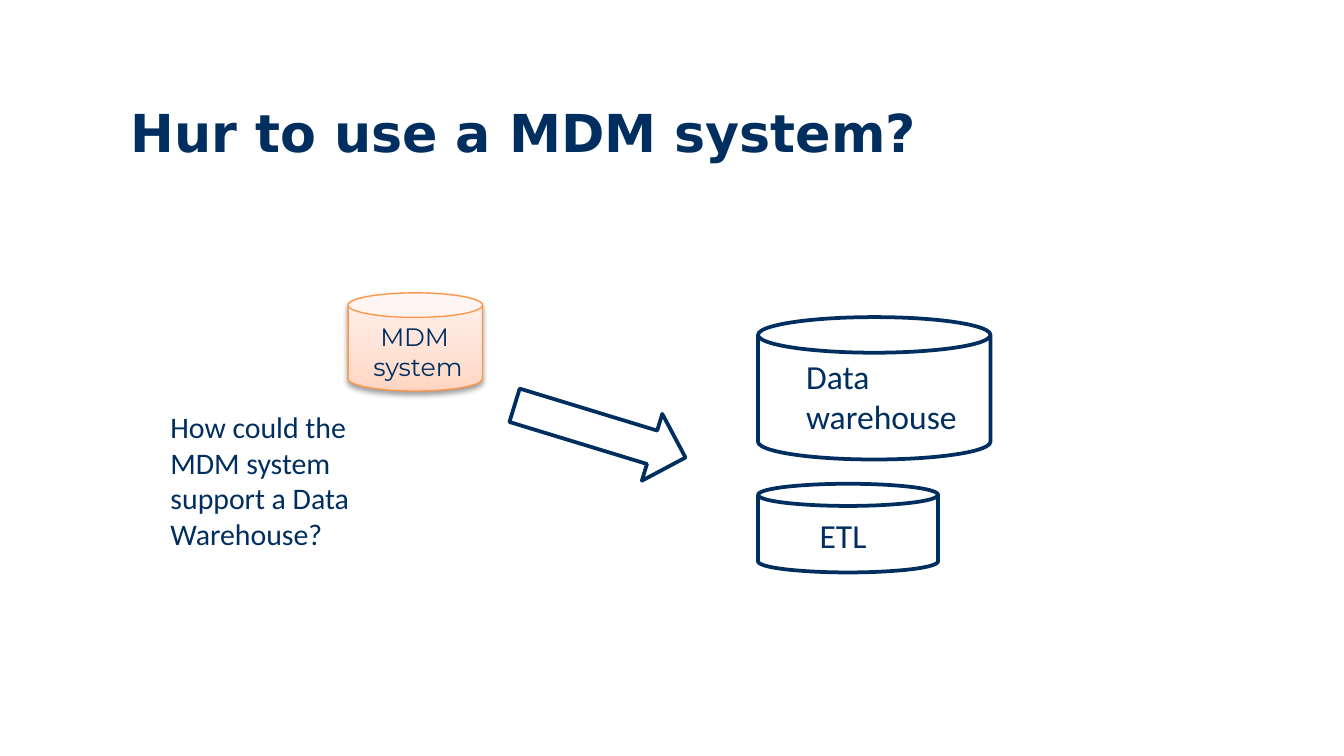
from lxml import etree
from pptx import Presentation
from pptx.dml.color import RGBColor
from pptx.enum.shapes import MSO_SHAPE
from pptx.enum.text import MSO_ANCHOR, PP_ALIGN
from pptx.oxml import parse_xml
from pptx.oxml.ns import nsdecls, qn
from pptx.util import Inches, Pt

CAN, ARROW = MSO_SHAPE.CAN, MSO_SHAPE.RIGHT_ARROW
LEFT, CENTER = PP_ALIGN.LEFT, PP_ALIGN.CENTER
TITLE_ONLY = 5

COLORS = {"navy": "002F5F", "white": "FFFFFF", "orange": "FE9749", "shadow": "000000"}
PEACH_STOPS = [(0, "FFD5C2"), (35, "FFE1D4"), (100, "FFF3EF")]

# Content: boxes are left, top, width, height in inches
TITLE = ("Hur to use a MDM system?", (0.87, 0.69, 7.49, 0.65))
MDM_CAN = (2.59, 2.18, 1, 0.73)
OUTLINED = [  # kind, box, rotation
    (ARROW, (3.8, 2.95, 1.33, 0.52), 17),
    (CAN, (5.64, 2.36, 1.73, 1.06), 0),
    (CAN, (5.64, 3.6, 1.34, 0.66), 0),
]
LABELS = [  # paragraphs, box, font, size, alignment, side and top margins
    (["MDM", " system"], (2.11, 2.32, 1.95, 0.59), "Montserrat", 13.5, CENTER, (0.14, 0.07)),
    (["Data warehouse"], (5.9, 2.6, 1.47, 0.71), "Calibri", 18, LEFT, (0.1, 0.05)),
    (["ETL"], (6, 3.78, 1.47, 0.4), "Calibri", 18, LEFT, (0.1, 0.05)),
    (["How could the MDM system support a Data Warehouse?"],
     (1.17, 2.99, 1.62, 1.18), "Calibri", 16, LEFT, (0.1, 0.05)),
]


def color(name):
    return RGBColor.from_string(COLORS[name])


def add_run(paragraph, text, font, size, bold=False):
    run = paragraph.add_run()
    run.text = text
    run.font.name, run.font.size, run.font.bold = font, Pt(size), bold
    run.font.color.rgb = color("navy")


def add_outlined(slide, kind, box, line, width, rotation=0):
    shape = slide.shapes.add_shape(kind, *map(Inches, box))
    shape.rotation = rotation
    shape.shadow.inherit = False
    shape.fill.solid()
    shape.fill.fore_color.rgb = color("white")
    shape.line.color.rgb = color(line)
    shape.line.width = Pt(width)
    return shape


def add_gradient_and_shadow(shape):
    properties = shape.element.spPr
    stops = "".join(f'<a:gs pos="{position * 1000}"><a:srgbClr val="{value}"/></a:gs>'
                    for position, value in PEACH_STOPS)
    gradient = parse_xml(f'<a:gradFill {nsdecls("a")} rotWithShape="1"><a:gsLst>{stops}</a:gsLst>'
                         '<a:lin ang="16200000" scaled="0"/></a:gradFill>')
    properties.replace(properties.find(qn("a:solidFill")), gradient)
    shadow = etree.SubElement(properties.find(qn("a:effectLst")), qn("a:outerShdw"),
                              blurRad=str(Pt(3.1)), dist=str(Pt(1.6)), dir="5400000",
                              rotWithShape="0")
    shade = etree.SubElement(shadow, qn("a:srgbClr"), val=COLORS["shadow"])
    etree.SubElement(shade, qn("a:alpha"), val="38000")


def add_label(slide, paragraphs, box, font, size, alignment, margins):
    frame = slide.shapes.add_textbox(*map(Inches, box)).text_frame
    frame.word_wrap = True
    frame.margin_left = frame.margin_right = Inches(margins[0])
    frame.margin_top = frame.margin_bottom = Inches(margins[1])
    for index, text in enumerate(paragraphs):
        paragraph = frame.add_paragraph() if index else frame.paragraphs[0]
        paragraph.alignment = alignment
        add_run(paragraph, text, font, size)


def main():
    # Widescreen page, 16:9
    presentation = Presentation()
    presentation.slide_width = Inches(10)
    presentation.slide_height = Inches(10 * 9 / 16)
    slide = presentation.slides.add_slide(presentation.slide_layouts[TITLE_ONLY])

    # Title
    text, box = TITLE
    title = slide.shapes.title
    title.left, title.top, title.width, title.height = map(Inches, box)
    title.text_frame.vertical_anchor = MSO_ANCHOR.MIDDLE
    paragraph = title.text_frame.paragraphs[0]
    paragraph.alignment = LEFT
    paragraph.line_spacing = 0.85
    add_run(paragraph, text, "DejaVu Sans", 28, bold=True)

    # MDM store, arrow and warehouse stores
    add_gradient_and_shadow(add_outlined(slide, CAN, MDM_CAN, "orange", 0.75))
    for kind, box, rotation in OUTLINED:
        add_outlined(slide, kind, box, "navy", 2, rotation)

    # Labels and question
    for label in LABELS:
        add_label(slide, *label)

    presentation.save("out.pptx")


if __name__ == "__main__":
    main()
